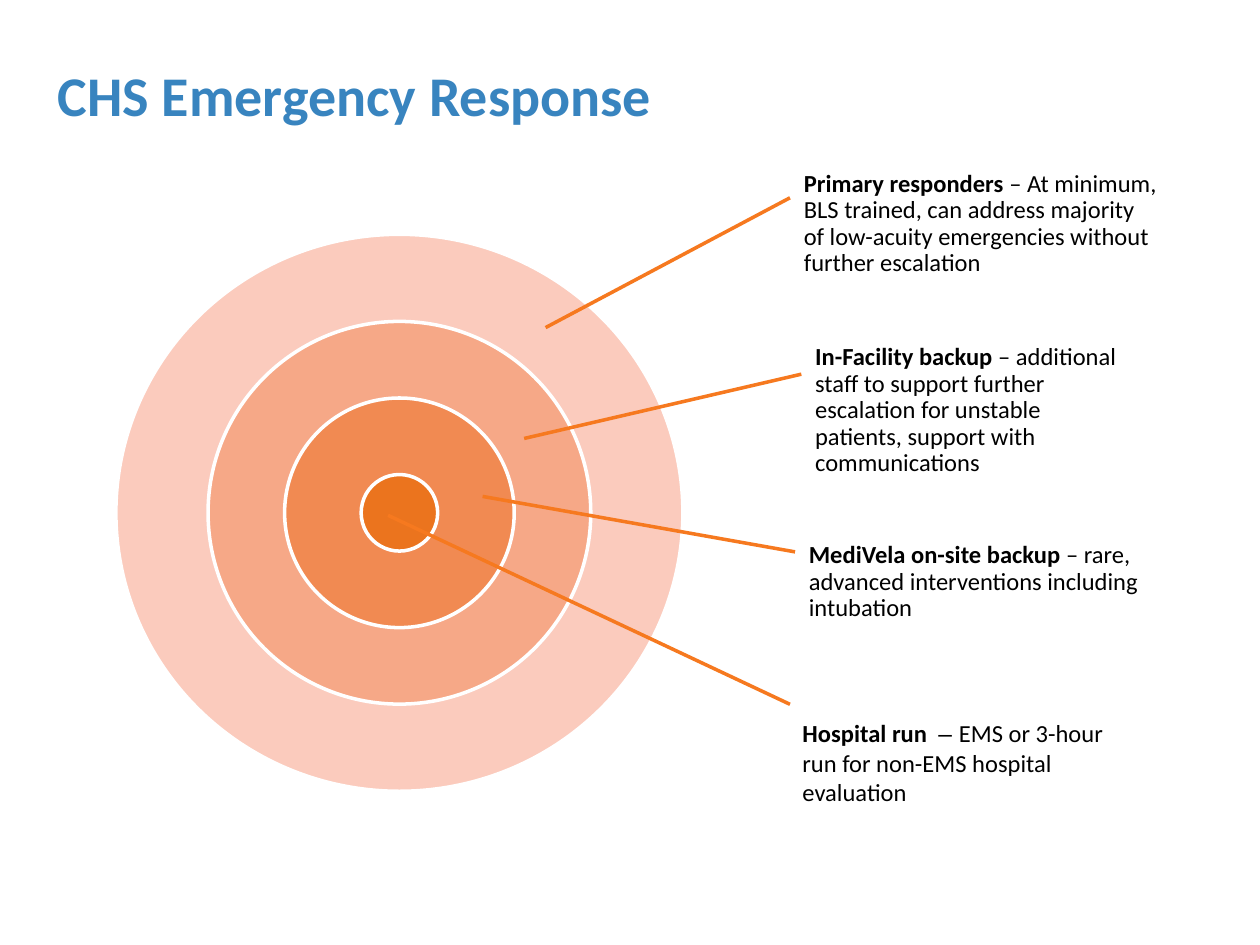
from collections import namedtuple

from lxml.etree import SubElement
from pptx import Presentation
from pptx.dml.color import RGBColor
from pptx.enum.shapes import MSO_CONNECTOR, MSO_SHAPE
from pptx.enum.text import MSO_ANCHOR, MSO_AUTO_SIZE, PP_ALIGN
from pptx.oxml.ns import qn
from pptx.util import Inches, Pt

WHITE = RGBColor(0xFF, 0xFF, 0xFF)
BLACK = RGBColor(0x00, 0x00, 0x00)
BLUE = RGBColor(0x38, 0x84, 0xBF)
ORANGE = RGBColor(0xF6, 0x79, 0x1F)
OUTER = RGBColor(0xFB, 0xCB, 0xBD)
RING_COLORS = (
    RGBColor(0xF6, 0xA8, 0x87),
    RGBColor(0xF1, 0x8A, 0x52),
    RGBColor(0xEB, 0x74, 0x1E),
)

# The slide is a grid of 100 columns by 75 rows
COLUMNS, ROWS = 100, 75
CELL = Inches(0.1)
LINE_WIDTH = Pt(2)

Box = namedtuple("Box", "left top width height")
Callout = namedtuple("Callout", "box runs line_row target format")

TIGHT = {
    "margin_left": Inches(0.11), "margin_right": Inches(0.02),
    "margin_top": Inches(0.02), "margin_bottom": Inches(0.02),
    "vertical_anchor": MSO_ANCHOR.MIDDLE, "line_spacing": 0.9,
}
GROWING = {"auto_size": MSO_AUTO_SIZE.SHAPE_TO_FIT_TEXT}

# line_row: row where the leader meets the text; target: its end in the rings
CALLOUTS = (
    Callout(Box(62.7, 12.5, 29.6, 10.6),
            (("Primary responders ", "Calibri", True),
             ("– At minimum, BLS trained, can address majority of low-acuity "
              "emergencies without further escalation", "Calibri", False)),
            15.7, (43.3, 26), TIGHT),
    Callout(Box(63.6, 27.5, 25.4, 10.2),
            (("In-Facility backup ", "Calibri", True),
             ("– additional staff to support further escalation for unstable "
              "patients, support with communications", "Calibri", False)),
            29.7, (41.6, 34.8), TIGHT),
    Callout(Box(63.1, 41.1, 31.3, 10.2),
            (("MediVela on-site backup ", "Calibri", True),
             ("– rare, advanced interventions including intubation",
              "Calibri", False)),
            43.8, (38.3, 39.4), TIGHT),
    Callout(Box(62.7, 56.5, 27.2, 8.1),
            (("Hospital run  ", "Calibri", True),
             ("– ", "Arial", False),
             ("EMS or 3-hour run for non-EMS hospital evaluation",
              "Calibri", False)),
            55.9, (30.8, 40.9), GROWING),
)


def cells(*values):
    return [round(value * CELL) for value in values]


def set_attributes(target, values):
    for name, value in values.items():
        setattr(target, name, value)


def add_run(paragraph, text, font_name, size, bold, color):
    run = paragraph.add_run()
    run.text = text
    set_attributes(run.font, {"name": font_name, "size": Pt(size), "bold": bold})
    run.font.color.rgb = color


def add_title(slide, box, text):
    title = slide.shapes.title
    set_attributes(title, dict(zip(box._fields, cells(*box))))
    title.fill.solid()
    title.fill.fore_color.rgb = WHITE
    set_attributes(title.text_frame, {
        "margin_left": 0, "margin_right": 0, "margin_top": 0,
        "margin_bottom": 0, "vertical_anchor": MSO_ANCHOR.MIDDLE,
        "word_wrap": True,
    })
    paragraph = title.text_frame.paragraphs[0]
    paragraph.alignment = PP_ALIGN.LEFT
    add_run(paragraph, text, "Calibri", 32, True, BLUE)


def add_ellipse(slide, box, color):
    ellipse = slide.shapes.add_shape(MSO_SHAPE.OVAL, *cells(*box))
    ellipse.shadow.inherit = False
    ellipse.fill.solid()
    ellipse.fill.fore_color.rgb = color
    ellipse.line.color.rgb = WHITE
    ellipse.line.width = LINE_WIDTH


def add_target(slide, box):
    """Concentric circles, 5, 3 and 1 core widths across, on a wide disc."""
    add_ellipse(slide, box, OUTER)
    core = box.width * 0.135
    for multiple, color in zip((5, 3, 1), RING_COLORS):
        size = core * multiple
        left = box.left + (box.width - size) / 2
        top = box.top + (box.height - size) / 2
        add_ellipse(slide, Box(left, top, size, size), color)


def add_leader(slide, start, end):
    line = slide.shapes.add_connector(MSO_CONNECTOR.STRAIGHT, *cells(*start, *end))
    line.line.color.rgb = ORANGE
    line.line.width = LINE_WIDTH
    SubElement(line._element.spPr, qn("a:effectLst"))


def add_callout(slide, callout):
    add_leader(slide, (callout.box.left, callout.line_row), callout.target)
    frame = slide.shapes.add_textbox(*cells(*callout.box)).text_frame
    frame.word_wrap = True
    paragraph = frame.paragraphs[0]
    for name, value in callout.format.items():
        owner = paragraph if name == "line_spacing" else frame
        setattr(owner, name, value)
    for text, font_name, bold in callout.runs:
        add_run(paragraph, text, font_name, 14, bold, BLACK)


def main():
    presentation = Presentation()
    presentation.slide_width, presentation.slide_height = cells(COLUMNS, ROWS)
    slide = presentation.slides.add_slide(presentation.slide_layouts[5])

    add_title(slide, Box(4.6, 2.1, 90.8, 10.8), "CHS Emergency Response")
    add_target(slide, Box(9.2, 18.6, 45, 44.2))
    for callout in reversed(CALLOUTS):
        add_callout(slide, callout)

    presentation.save("out.pptx")


if __name__ == "__main__":
    main()
